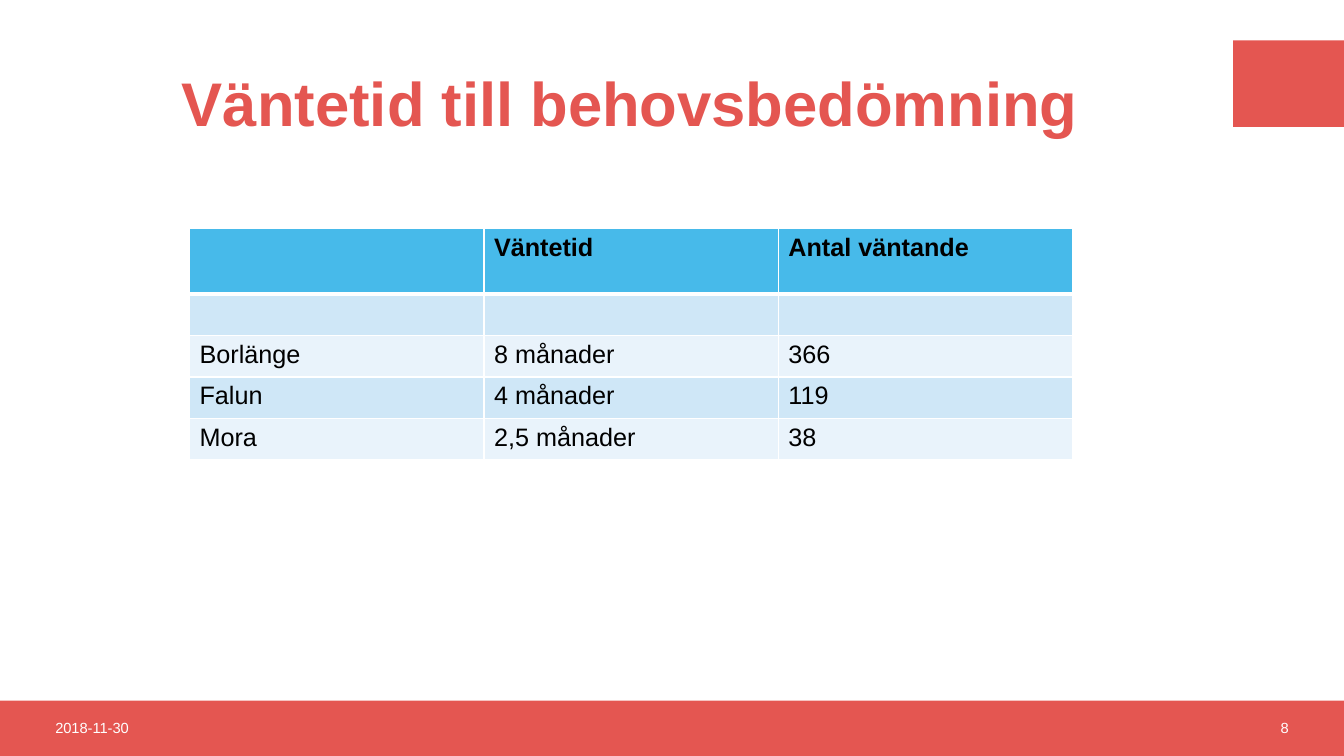
from dataclasses import dataclass

from lxml.etree import SubElement
from pptx import Presentation
from pptx.dml.color import RGBColor
from pptx.enum.shapes import MSO_SHAPE
from pptx.enum.text import MSO_ANCHOR, PP_ALIGN
from pptx.oxml.ns import qn
from pptx.util import Inches, Pt


@dataclass(frozen=True)
class Theme:
    """Colours, font and type sizes of the slide."""
    font: str = "Arial"
    red: str = "E45651"
    white: str = "FFFFFF"
    black: str = "000000"
    header: str = "47BAEA"
    band_dark: str = "CFE7F7"
    band_light: str = "E9F3FB"
    title_size: float = 44
    table_size: float = 18
    footer_size: float = 10.5


THEME = Theme()
WAITING_TIMES = [
    ("", "Väntetid", "Antal väntande"),
    ("", "", ""),
    ("Borlänge", "8 månader", "366"),
    ("Falun", "4 månader", "119"),
    ("Mora", "2,5 månader", "38"),
]


def write_text(tf, text, size, color, bold=False, align=PP_ALIGN.LEFT, spacing=1.0):
    """Write one formatted paragraph into a text frame."""
    p = tf.paragraphs[0]
    p.alignment = align
    p.line_spacing = spacing
    r = p.add_run()
    r.text = text
    r.font.name = THEME.font
    r.font.size = Pt(size)
    r.font.bold = bold
    r.font.color.rgb = RGBColor.from_string(color)


def add_block(s, left, top, width, height):
    """Add a plain red rectangle."""
    sp = s.shapes.add_shape(MSO_SHAPE.RECTANGLE, Inches(left), Inches(top),
                            Inches(width), Inches(height))
    sp.shadow.inherit = False
    sp.fill.solid()
    sp.fill.fore_color.rgb = RGBColor.from_string(THEME.red)
    sp.line.fill.background()


def add_label(s, left, top, width, height, text, **fmt):
    """Add a wrapped, vertically centred text box."""
    sp = s.shapes.add_textbox(Inches(left), Inches(top), Inches(width), Inches(height))
    tf = sp.text_frame
    tf.word_wrap = True
    tf.vertical_anchor = MSO_ANCHOR.MIDDLE
    write_text(tf, text, **fmt)


def set_borders(cell, top, bottom):
    """Draw white cell borders with the given top and bottom widths."""
    tcPr = cell._tc.get_or_add_tcPr()
    for side, width in (("L", 1), ("R", 1), ("T", top), ("B", bottom)):
        ln = SubElement(tcPr, qn(f"a:ln{side}"), w=str(Pt(width)))
        fill = SubElement(ln, qn("a:solidFill"))
        SubElement(fill, qn("a:srgbClr"), val=THEME.white)


def add_waiting_table(s, left, top, col_width, header_height, row_height):
    """Add the banded table of waiting times."""
    n_rows, n_cols = len(WAITING_TIMES), len(WAITING_TIMES[0])
    height = header_height + row_height * (n_rows - 1)
    table = s.shapes.add_table(n_rows, n_cols, Inches(left), Inches(top),
                               Inches(col_width * n_cols), Inches(height)).table
    for col in table.columns:
        col.width = Inches(col_width)
    for i, values in enumerate(WAITING_TIMES):
        is_header = i == 0
        table.rows[i].height = Inches(header_height if is_header else row_height)
        band = THEME.band_dark if i % 2 else THEME.band_light
        for j, text in enumerate(values):
            cell = table.cell(i, j)
            set_borders(cell, top=3 if i == 1 else 1, bottom=3 if is_header else 1)
            cell.fill.solid()
            cell.fill.fore_color.rgb = RGBColor.from_string(
                THEME.header if is_header else band)
            if text:
                write_text(cell.text_frame, text, size=THEME.table_size,
                           color=THEME.black, bold=is_header)


def main():
    """Build the slide and save it."""
    prs = Presentation()
    prs.slide_width, prs.slide_height = Inches(13.33), Inches(7.5)
    s = prs.slides.add_slide(prs.slide_layouts[6])
    add_block(s, 0, 6.95, 13.33, 0.55)
    add_block(s, 12.23, 0.4, 1.1, 0.86)
    add_label(s, 0.45, 0.4, 11.61, 1.32, "Väntetid till behovsbedömning",
              size=THEME.title_size, color=THEME.red, bold=True,
              align=PP_ALIGN.CENTER, spacing=0.9)
    add_waiting_table(s, 1.88, 2.27, col_width=2.92, header_height=0.65, row_height=0.41)
    for left, text, align in ((0.45, "2018-11-30", PP_ALIGN.LEFT),
                              (9.88, "8", PP_ALIGN.RIGHT)):
        add_label(s, left, 6.95, 3, 0.54, text, size=THEME.footer_size,
                  color=THEME.white, align=align)
    prs.save("out.pptx")


if __name__ == "__main__":
    main()
